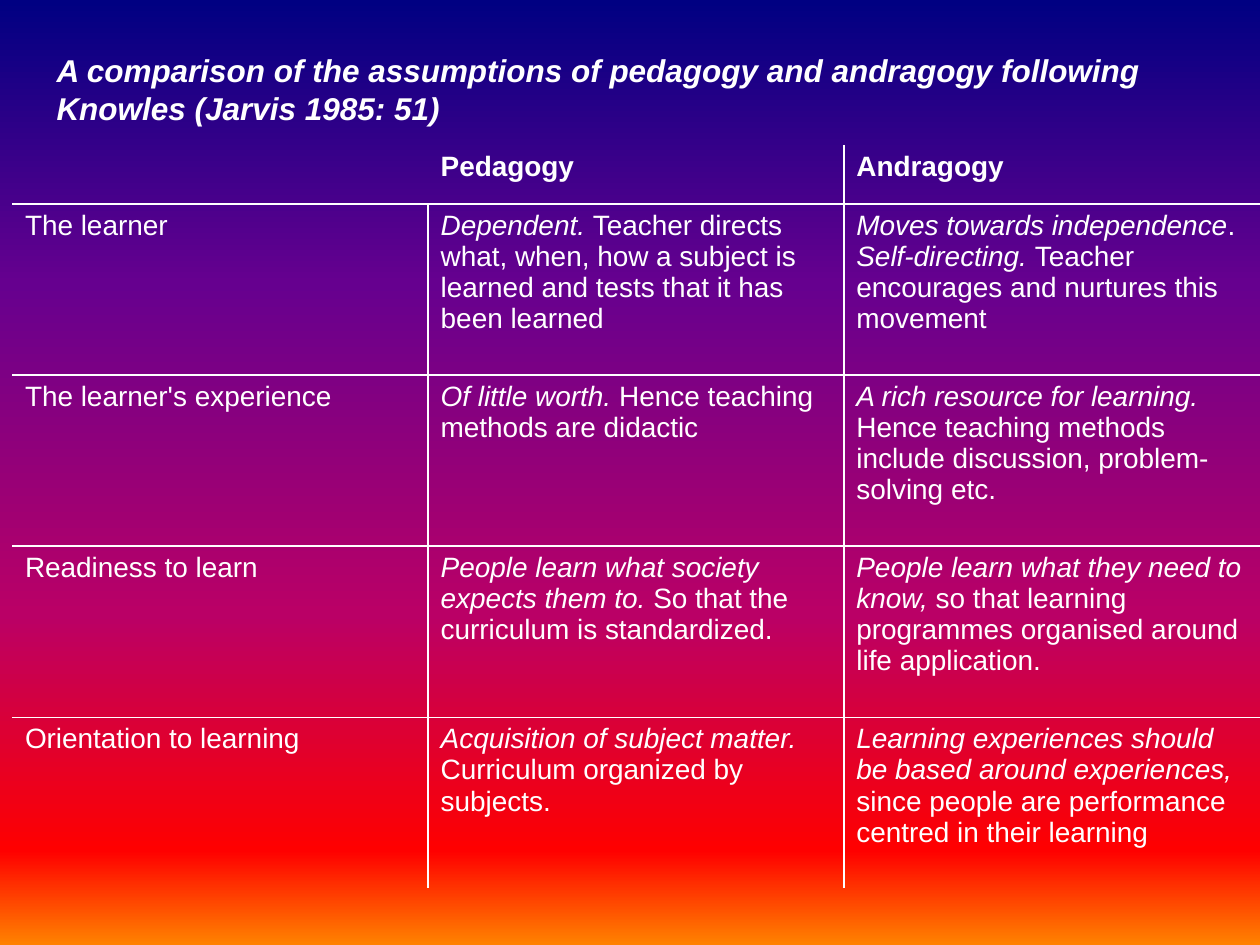
from dataclasses import dataclass

from lxml.etree import SubElement
from pptx import Presentation
from pptx.dml.color import RGBColor
from pptx.enum.text import MSO_AUTO_SIZE
from pptx.oxml.ns import qn
from pptx.slide import Slide
from pptx.table import _Cell as Cell
from pptx.text.text import _Paragraph as Paragraph
from pptx.util import Cm, Pt

WHITE = "FFFFFF"
FONT = "Arial"
GRADIENT = [(0, "000082"), (30, "66008F"), (65, "BA0066"), (90, "FF0000"), (100, "FF8200")]
COLUMN_WIDTH = Cm(8.38)
HEADER_HEIGHT = Cm(1.19)
ROW_HEIGHT = Cm(3.45)


@dataclass
class Statement:
    """One paragraph: an italic key phrase and its plain continuation."""
    key: str
    rest: str


@dataclass
class Assumption:
    topic: str
    pedagogy: list[Statement]
    andragogy: list[Statement]


ASSUMPTIONS = [
    Assumption(
        "The learner",
        [Statement("Dependent. ", "Teacher directs what, when, how a subject is learned "
                   "and tests that it has been learned")],
        [Statement("Moves towards independence", "."),
         Statement("Self-directing. ", "Teacher encourages and nurtures this movement")]),
    Assumption(
        "The learner's experience",
        [Statement("Of little worth. ", "Hence teaching methods are didactic")],
        [Statement("A rich resource for learning.",
                   " Hence teaching methods include discussion, problem-solving etc.")]),
    Assumption(
        "Readiness to learn",
        [Statement("People learn what society expects them to.",
                   " So that the curriculum is standardized.")],
        [Statement("People learn what they need to know, ",
                   "so that learning programmes organised around life application.")]),
    Assumption(
        "Orientation to learning",
        [Statement("Acquisition of subject matter.", " Curriculum organized by subjects.")],
        [Statement("Learning experiences should be based around experiences, ",
                   "since people are performance centred in their learning")]),
]


def color(value: str) -> RGBColor:
    return RGBColor.from_string(value)


def set_font(paragraph: Paragraph, size: float, bold: bool = False) -> None:
    font = paragraph.font
    font.name, font.size, font.bold = FONT, Pt(size), bold
    font.color.rgb = color(WHITE)


def paint_background(slide: Slide) -> None:
    fill = slide.background.fill
    fill.gradient()
    fill.gradient_angle = 270
    stops = slide.background._cSld.find(".//" + qn("a:gsLst"))
    for stop in list(stops):
        stops.remove(stop)
    for position, value in GRADIENT:
        stop = SubElement(stops, qn("a:gs"), pos=str(position * 1000))
        SubElement(stop, qn("a:srgbClr"), val=value)


def set_borders(cell: Cell, visible: str) -> None:
    """Draw the sides named in visible (letters of LRTB) and hide the others."""
    properties = cell._tc.get_or_add_tcPr()
    for side in "LRTB":
        line = SubElement(properties, qn(f"a:ln{side}"), w=str(Pt(1)))
        if side in visible:
            fill = SubElement(line, qn("a:solidFill"))
            SubElement(fill, qn("a:srgbClr"), val=WHITE)
        else:
            SubElement(line, qn("a:noFill"))


def inner_sides(row: int, column: int, last_row: int, last_column: int) -> str:
    """Name the sides between cells, leaving the empty corner open on its right."""
    sides = ("T" if row > 0 else "") + ("B" if row < last_row else "")
    if column > (1 if row == 0 else 0):
        sides += "L"
    if column < last_column and (row, column) != (0, 0):
        sides += "R"
    return sides


def write_statements(cell: Cell, statements: list[Statement]) -> None:
    for index, statement in enumerate(statements):
        paragraph = cell.text_frame.paragraphs[0] if index == 0 else cell.text_frame.add_paragraph()
        for text, italic in ((statement.key, True), (statement.rest, False)):
            run = paragraph.add_run()
            run.text = text
            run.font.italic = italic


def add_comparison(slide: Slide) -> None:
    row_count = len(ASSUMPTIONS) + 1
    table = slide.shapes.add_table(
        row_count, 3, Cm(0.25), Cm(2.92), COLUMN_WIDTH * 3,
        HEADER_HEIGHT + ROW_HEIGHT * len(ASSUMPTIONS)).table
    table.first_row = table.horz_banding = False
    for column in table.columns:
        column.width = COLUMN_WIDTH
    for index, row in enumerate(table.rows):
        row.height = ROW_HEIGHT if index else HEADER_HEIGHT

    table.cell(0, 1).text = "Pedagogy"
    table.cell(0, 2).text = "Andragogy"
    for index, assumption in enumerate(ASSUMPTIONS, start=1):
        table.cell(index, 0).text = assumption.topic
        write_statements(table.cell(index, 1), assumption.pedagogy)
        write_statements(table.cell(index, 2), assumption.andragogy)

    for row in range(row_count):
        for column in range(3):
            cell = table.cell(row, column)
            set_borders(cell, inner_sides(row, column, row_count - 1, 2))
            cell.fill.background()
            for paragraph in cell.text_frame.paragraphs:
                set_font(paragraph, 16, bold=row == 0)


def add_title(slide: Slide) -> None:
    frame = slide.shapes.add_textbox(Cm(0.89), Cm(0.91), Cm(23.39), Cm(2.92)).text_frame
    frame.word_wrap = True
    frame.auto_size = MSO_AUTO_SIZE.SHAPE_TO_FIT_TEXT
    paragraph = frame.paragraphs[0]
    paragraph.text = ("A comparison of the assumptions of pedagogy and andragogy "
                      "following Knowles (Jarvis 1985: 51)")
    paragraph.space_before = Pt(9)
    set_font(paragraph, 18, bold=True)
    paragraph.font.italic = True


def main() -> None:
    presentation = Presentation()
    presentation.slide_width, presentation.slide_height = Cm(25.4), Cm(19.05)
    slide = presentation.slides.add_slide(presentation.slide_layouts[6])
    paint_background(slide)
    add_comparison(slide)
    add_title(slide)
    presentation.save("out.pptx")


if __name__ == "__main__":
    main()
